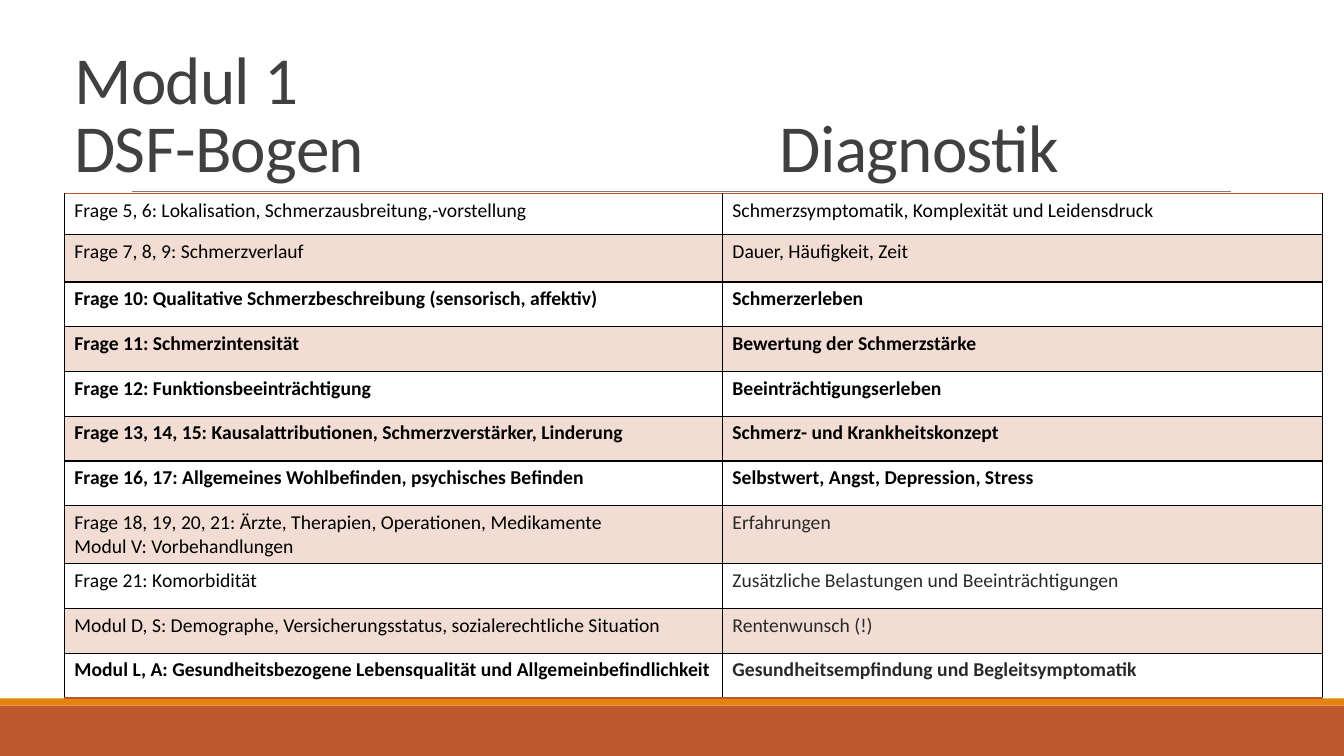
from typing import NamedTuple

from lxml import etree
from pptx import Presentation
from pptx.dml.color import RGBColor
from pptx.enum.shapes import MSO_CONNECTOR, MSO_SHAPE
from pptx.enum.text import MSO_ANCHOR
from pptx.oxml.ns import qn
from pptx.util import Pt

RECT = MSO_SHAPE.RECTANGLE
STRAIGHT = MSO_CONNECTOR.STRAIGHT
BOTTOM = MSO_ANCHOR.BOTTOM

FONT = "Calibri"
COLORS = {
    "rust": "BD582C",
    "orange": "E48312",
    "rule": "808080",
    "title": "404040",
    "black": "000000",
    "dark": "292929",
}
SLIDE_W, SLIDE_H = 960, 540
COLUMN_WIDTHS = (470, 428.6)


class Band(NamedTuple):
    top: float
    height: float
    color: str


class Row(NamedTuple):
    question: str
    diagnostic: str
    bold: bool = False
    diagnostic_color: str = "black"
    height: float = 32


BANDS = [Band(504, 36, "rust"), Band(498.8, 5.2, "orange")]

ROWS = [
    Row("Frage 5, 6: Lokalisation, Schmerzausbreitung,-vorstellung",
        "Schmerzsymptomatik, Komplexität und Leidensdruck", height=29.6),
    Row("Frage 7, 8, 9: Schmerzverlauf", "Dauer, Häufigkeit, Zeit", height=33.6),
    Row("Frage 10: Qualitative Schmerzbeschreibung (sensorisch, affektiv)",
        "Schmerzerleben", True),
    Row("Frage 11: Schmerzintensität", "Bewertung der Schmerzstärke", True),
    Row("Frage 12: Funktionsbeeinträchtigung", "Beeinträchtigungserleben", True),
    Row("Frage 13, 14, 15: Kausalattributionen, Schmerzverstärker, Linderung",
        "Schmerz- und Krankheitskonzept", True),
    Row("Frage 16, 17: Allgemeines Wohlbefinden, psychisches Befinden",
        "Selbstwert, Angst, Depression, Stress", True),
    Row("Frage 18, 19, 20, 21: Ärzte, Therapien, Operationen, Medikamente\n"
        "Modul V: Vorbehandlungen", "Erfahrungen", False, "dark", 41.4),
    Row("Frage 21: Komorbidität",
        "Zusätzliche Belastungen und Beeinträchtigungen", False, "dark"),
    Row("Modul D, S: Demographe, Versicherungsstatus, sozialerechtliche Situation",
        "Rentenwunsch (!)", False, "dark"),
    Row("Modul L, A: Gesundheitsbezogene Lebensqualität und Allgemeinbefindlichkeit",
        "Gesundheitsempfindung und Begleitsymptomatik", True, "dark"),
]


def rgb(name: str) -> RGBColor:
    return RGBColor.from_string(COLORS[name])


def format_runs(tf, size: float, color: str, bold: bool = False) -> None:
    for p in tf.paragraphs:
        for r in p.runs:
            r.font.name = FONT
            r.font.size = Pt(size)
            r.font.bold = bold
            r.font.color.rgb = rgb(color)


def add_band(s, band: Band) -> None:
    sp = s.shapes.add_shape(RECT, 0, Pt(band.top), Pt(SLIDE_W), Pt(band.height))
    sp.shadow.inherit = False
    sp.fill.solid()
    sp.fill.fore_color.rgb = rgb(band.color)
    sp.line.fill.background()


def add_title_rule(s) -> None:
    line = s.shapes.add_connector(STRAIGHT, Pt(94.3), Pt(136.8), Pt(879), Pt(136.8))
    line.line.color.rgb = rgb("rule")
    line.line.width = Pt(0.5)
    etree.SubElement(line._element.spPr, qn("a:effectLst"))


def add_title(s) -> None:
    """Two-line title whose second part sits on a tab stop."""
    sp = s.shapes.add_textbox(Pt(46), Pt(22.3), Pt(832.5), Pt(114.5))
    tf = sp.text_frame
    tf.word_wrap = True
    tf.vertical_anchor = BOTTOM
    p = tf.paragraphs[0]
    p.text = "Modul 1\vDSF-Bogen\tDiagnostik"
    p.line_spacing = 0.85
    tabs = etree.SubElement(p._p.get_or_add_pPr(), qn("a:tabLst"))
    etree.SubElement(tabs, qn("a:tab"), pos=str(int(Pt(504))), algn="l")
    format_runs(tf, 48, "title")
    for r in p.runs:
        r._r.get_or_add_rPr().set("spc", "-50")


def add_border(cell, side: str) -> None:
    """Draw a 1 pt rule on the cell side named by its XML tag."""
    tcPr = cell._tc.get_or_add_tcPr()
    ln = etree.SubElement(tcPr, qn(side), w=str(int(Pt(1))))
    fill = etree.SubElement(ln, qn("a:solidFill"))
    etree.SubElement(fill, qn("a:srgbClr"), val=COLORS["rust"])


def fill_cell(cell, shaded: bool) -> None:
    if not shaded:
        cell.fill.background()
        return
    cell.fill.solid()
    cell.fill.fore_color.rgb = rgb("rust")
    color = cell._tc.tcPr.find(".//" + qn("a:srgbClr"))
    etree.SubElement(color, qn("a:alpha"), val="20000")


def add_question_table(s) -> None:
    frame = s.shapes.add_table(len(ROWS), len(COLUMN_WIDTHS), Pt(46), Pt(138.2),
                               Pt(sum(COLUMN_WIDTHS)), Pt(sum(r.height for r in ROWS)))
    table = frame.table
    table.first_row = table.horz_banding = False
    tblPr = table._tbl.tblPr
    tblPr.remove(tblPr.find(qn("a:tableStyleId")))
    for column, width in zip(table.columns, COLUMN_WIDTHS):
        column.width = Pt(width)
    for i, row in enumerate(ROWS):
        table.rows[i].height = Pt(row.height)
        texts = ((row.question, "black"), (row.diagnostic, row.diagnostic_color))
        for j, (text, color) in enumerate(texts):
            cell = table.cell(i, j)
            cell.text_frame.text = text
            format_runs(cell.text_frame, 14, color, row.bold)
            if i == 0:
                add_border(cell, "a:lnT")
            if i in (0, len(ROWS) - 1):
                add_border(cell, "a:lnB")
            fill_cell(cell, shaded=i % 2 == 1)


def main() -> None:
    prs = Presentation()
    prs.slide_width, prs.slide_height = Pt(SLIDE_W), Pt(SLIDE_H)
    s = prs.slides.add_slide(prs.slide_layouts[6])
    for band in BANDS:
        add_band(s, band)
    add_title_rule(s)
    add_title(s)
    add_question_table(s)
    prs.save("out.pptx")


if __name__ == "__main__":
    main()
